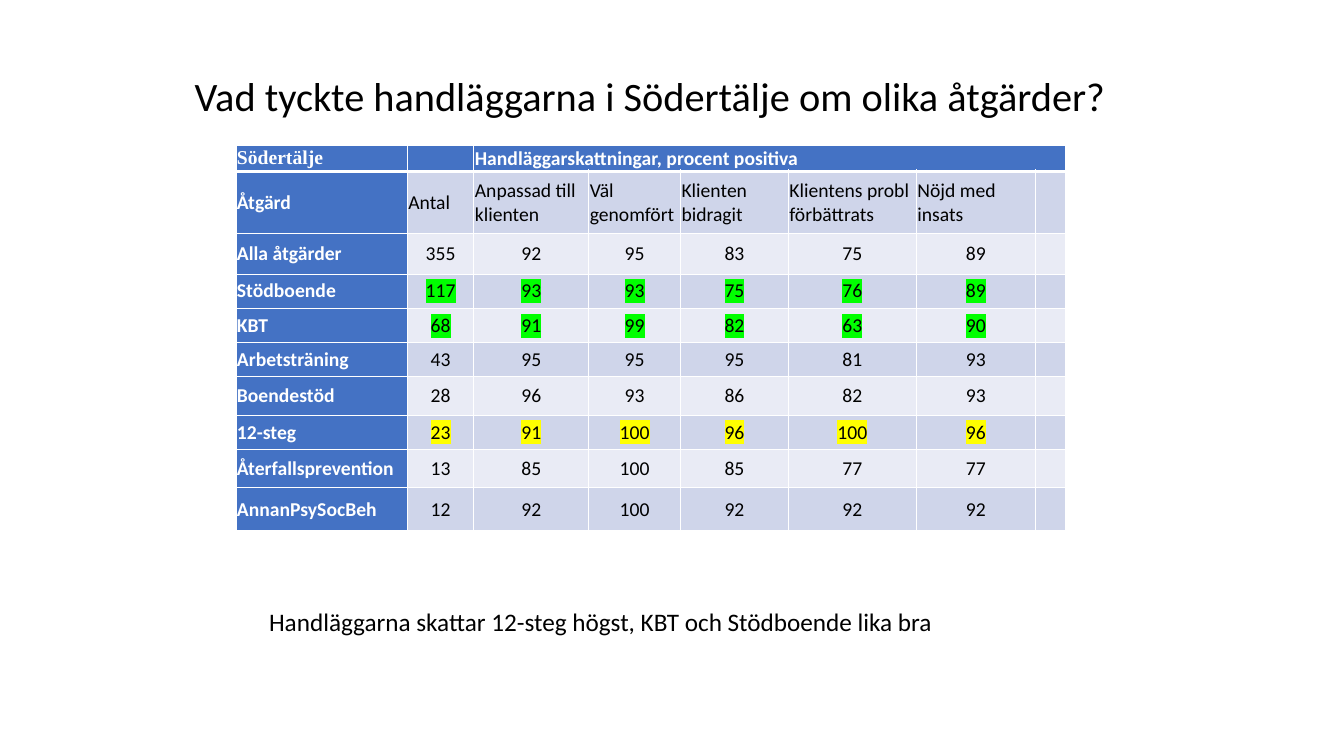
from lxml import etree
from pptx import Presentation
from pptx import util as u
from pptx.dml.color import RGBColor
from pptx.enum import text
from pptx.oxml.ns import qn

BLACK = RGBColor(0x00, 0x00, 0x00)
WHITE = RGBColor(0xFF, 0xFF, 0xFF)
BLUE = RGBColor(0x44, 0x72, 0xC4)
BAND_DARK = RGBColor(0xCF, 0xD5, 0xEA)
BAND_LIGHT = RGBColor(0xE9, 0xEB, 0xF5)
GREEN = RGBColor(0x00, 0xFF, 0x00)
YELLOW = RGBColor(0xFF, 0xFF, 0x00)

COL_WIDTHS = [1.7, 0.66, 1.14, 0.91, 1.07, 1.27, 1.18, 0.3]
ROW_HEIGHTS = [0.26, 0.62, 0.4, 0.34, 0.34, 0.34, 0.38, 0.34, 0.38, 0.43]
ROWS = [
    ["Södertälje", "", "Handläggarskattningar, procent positiva"],
    ["Åtgärd", "Antal", "Anpassad till klienten", "Väl genomfört",
     "Klienten\vbidragit", "Klientens probl förbättrats", "Nöjd med\vinsats"],
    ["Alla åtgärder", 355, 92, 95, 83, 75, 89],
    ["Stödboende", 117, 93, 93, 75, 76, 89],
    ["KBT", 68, 91, 99, 82, 63, 90],
    ["Arbetsträning", 43, 95, 95, 95, 81, 93],
    ["Boendestöd", 28, 96, 93, 86, 82, 93],
    ["12-steg", 23, 91, 100, 96, 100, 96],
    ["Återfallsprevention", 13, 85, 100, 85, 77, 77],
    ["AnnanPsySocBeh", 12, 92, 100, 92, 92, 92],
]
HIGHLIGHTS = {"Stödboende": GREEN, "KBT": GREEN, "12-steg": YELLOW}


def write(tf, content, size, font="Calibri", color=BLACK, bold=False,
          align=text.PP_ALIGN.LEFT, highlight=None, spacing=None):
    p = tf.paragraphs[0]
    p.text = content
    p.alignment = align
    p.line_spacing = spacing
    for r in p.runs:
        r.font.size = u.Pt(size)
        r.font.bold = bold
        r.font.color.rgb = color
        if highlight:
            mark = etree.Element(qn("a:highlight"))
            etree.SubElement(mark, qn("a:srgbClr"), val=str(highlight))
            r.font._element.find(qn("a:solidFill")).addnext(mark)
        r.font.name = font
    for br in p._p.findall(qn("a:br")):
        etree.SubElement(br, qn("a:rPr"), sz=str(size * 100))
    if not content:
        etree.SubElement(p._p, qn("a:endParaRPr"), sz=str(size * 100))


def set_borders(cell, **widths):
    tcPr = cell._tc.get_or_add_tcPr()
    for side in "LRTB":
        ln = etree.SubElement(tcPr, qn("a:ln" + side),
                              w=str(u.Pt(widths.get(side, 1))))
        fill = etree.SubElement(ln, qn("a:solidFill"))
        etree.SubElement(fill, qn("a:srgbClr"), val=str(WHITE))


def add_title(slide, x, y, w, h):
    sp = slide.shapes.title
    sp.left, sp.top, sp.width, sp.height = map(u.Inches, (x, y, w, h))
    tf = sp.text_frame
    tf.auto_size = text.MSO_AUTO_SIZE.NONE
    tf.vertical_anchor = text.MSO_ANCHOR.MIDDLE
    write(tf, "Vad tyckte handläggarna i Södertälje om olika åtgärder?",
          28.8, spacing=0.9)


def format_cell(cell, row, col, value, highlight):
    heading = row == 0 or col == 0
    cell.margin_left = cell.margin_right = u.Inches(0.01)
    cell.margin_top = cell.margin_bottom = u.Inches(0.01)
    cell.vertical_anchor = text.MSO_ANCHOR.MIDDLE
    set_borders(cell, B=3 if row == 0 else 1, T=3 if row == 1 else 1)
    cell.fill.solid()
    band = BAND_DARK if row % 2 else BAND_LIGHT
    cell.fill.fore_color.rgb = BLUE if heading else band
    write(cell.text_frame, str(value), 14,
          font="Times New Roman" if row == col == 0 else "Calibri",
          color=WHITE if heading else BLACK, bold=heading,
          align=text.PP_ALIGN.CENTER if isinstance(value, int)
          else text.PP_ALIGN.LEFT,
          highlight=None if heading else highlight)


def add_ratings(slide, x, y):
    w, h = sum(COL_WIDTHS), sum(ROW_HEIGHTS)
    table = slide.shapes.add_table(
        len(ROWS), len(COL_WIDTHS),
        *map(u.Inches, (x, y, w, h))).table
    for column, width in zip(table.columns, COL_WIDTHS):
        column.width = u.Inches(width)
    for i, values in enumerate(ROWS):
        table.rows[i].height = u.Inches(ROW_HEIGHTS[i])
        padded = values + [""] * (len(COL_WIDTHS) - len(values))
        for j, value in enumerate(padded):
            format_cell(table.cell(i, j), i, j, value,
                        HIGHLIGHTS.get(values[0]))
    table.cell(0, 2).merge(table.cell(0, len(COL_WIDTHS) - 1))


def add_conclusion(slide, x, y, w, h):
    sp = slide.shapes.add_textbox(*map(u.Inches, (x, y, w, h)))
    tf = sp.text_frame
    tf.word_wrap = True
    tf.auto_size = text.MSO_AUTO_SIZE.SHAPE_TO_FIT_TEXT
    write(tf, "Handläggarna skattar 12-steg högst, KBT och Stödboende lika bra",
          18)


def main():
    prs = Presentation()
    prs.slide_width, prs.slide_height = u.Inches(13.33), u.Inches(7.5)
    slide = prs.slides.add_slide(prs.slide_layouts[5])
    add_title(slide, 1.83, 0.58, 9.4, 0.8)
    add_ratings(slide, 2.34, 1.44)
    add_conclusion(slide, 2.57, 5.97, 7.49, 0.4)
    prs.save("out.pptx")


if __name__ == "__main__":
    main()
